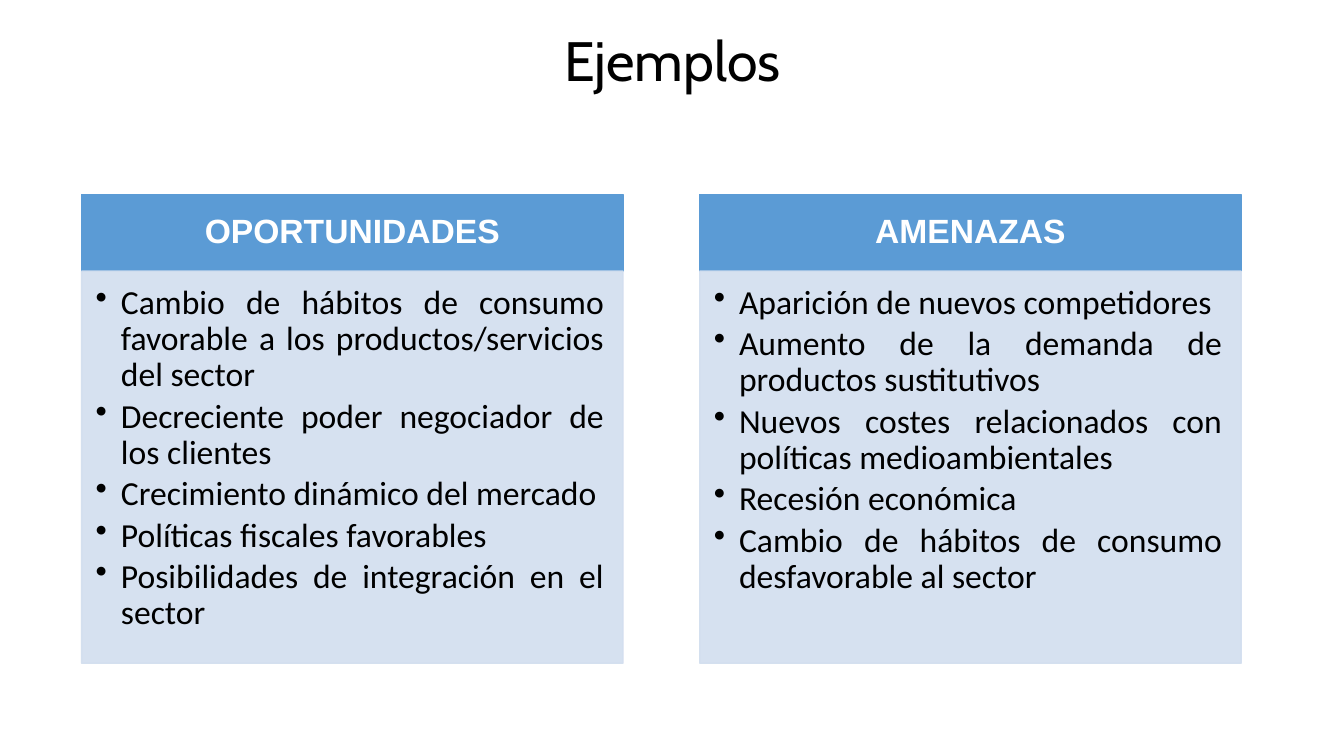
"""Build the slide of example opportunities and threats."""
from dataclasses import dataclass

from lxml.etree import SubElement
from pptx import Presentation
from pptx.dml.color import RGBColor
from pptx.enum.shapes import MSO_SHAPE as SHAPE
from pptx.enum.text import MSO_ANCHOR as ANCHOR, PP_ALIGN as ALIGN
from pptx.oxml.ns import qn
from pptx.util import Inches, Pt

BLACK = RGBColor(0x00, 0x00, 0x00)
WHITE = RGBColor(0xFF, 0xFF, 0xFF)
BLUE = RGBColor(0x5B, 0x9B, 0xD5)
PALE = RGBColor(0xD2, 0xDE, 0xEF)

LEFT, TOP, WIDTH, PITCH = 0.81, 1.93, 5.37, 6.13
HEAD_H, BODY_H = 0.76, 3.89


@dataclass
class Column:
    heading: str
    items: list[str]


COLUMNS = [
    Column("OPORTUNIDADES", [
        "Cambio de hábitos de consumo favorable a los productos/servicios del sector",
        "Decreciente poder negociador de los clientes",
        "Crecimiento dinámico del mercado",
        "Políticas fiscales favorables",
        "Posibilidades de integración en el sector",
    ]),
    Column("AMENAZAS", [
        "Aparición de nuevos competidores",
        "Aumento de la demanda de productos sustitutivos",
        "Nuevos costes relacionados con políticas medioambientales",
        "Recesión económica",
        "Cambio de hábitos de consumo desfavorable al sector",
    ]),
]


def set_text(p, text: str, font: str, size: float, color: RGBColor, align: ALIGN) -> None:
    p.text = text
    p.alignment = align
    p.line_spacing = 0.9
    p.font.name = font
    p.font.size = Pt(size)
    p.font.color.rgb = color


def set_frame(tf, anchor: ANCHOR, left: float, top: float, right: float, bottom: float) -> None:
    tf.word_wrap = True
    tf.vertical_anchor = anchor
    tf.margin_left, tf.margin_top = Inches(left), Inches(top)
    tf.margin_right, tf.margin_bottom = Inches(right), Inches(bottom)


def add_panel(s, left: float, top: float, height: float, color: RGBColor):
    sp = s.shapes.add_shape(SHAPE.RECTANGLE, Inches(left), Inches(top), Inches(WIDTH), Inches(height))
    sp.shadow.inherit = False
    sp.fill.solid()
    sp.fill.fore_color.rgb = color
    sp.line.color.rgb = color
    sp.line.width = Pt(1)
    return sp


def set_bullet(p) -> None:
    pPr = p._p.get_or_add_pPr()
    pPr.set("marL", str(Inches(0.25)))
    pPr.set("indent", str(Inches(-0.25)))
    bullet = pPr.makeelement(qn("a:buChar"), {"char": "•"})
    pPr.insert_element_before(bullet, "a:tabLst", "a:defRPr", "a:extLst")


def add_column(s, column: Column, left: float) -> None:
    head = add_panel(s, left, TOP, HEAD_H, BLUE)
    set_frame(head.text_frame, ANCHOR.MIDDLE, 0.19, 0.11, 0.19, 0.11)
    p = head.text_frame.paragraphs[0]
    set_text(p, column.heading, "Arial", 24, WHITE, ALIGN.CENTER)
    p.font.bold = True

    body = add_panel(s, left, TOP + HEAD_H, BODY_H, PALE)
    for color in body._element.spPr.iter(qn("a:srgbClr")):
        SubElement(color, qn("a:alpha"), val="90000")
    tf = body.text_frame
    set_frame(tf, ANCHOR.TOP, 0.14, 0.14, 0.19, 0.21)
    for i, item in enumerate(column.items):
        p = tf.add_paragraph() if i else tf.paragraphs[0]
        set_text(p, item, "Calibri", 24, BLACK, ALIGN.JUSTIFY)
        p.space_after = Pt(3.6)
        set_bullet(p)


def main() -> None:
    prs = Presentation()
    prs.slide_width, prs.slide_height = Inches(13.33), Inches(7.5)
    s = prs.slides.add_slide(prs.slide_layouts[6])
    title = s.shapes.add_textbox(Inches(0.92), Inches(0.4), Inches(11.5), Inches(0.47))
    set_frame(title.text_frame, ANCHOR.MIDDLE, 0.1, 0.05, 0.1, 0.05)
    set_text(title.text_frame.paragraphs[0], "Ejemplos", "Cabin", 39.6, BLACK, ALIGN.CENTER)
    for i, column in enumerate(COLUMNS):
        add_column(s, column, LEFT + i * PITCH)
    prs.save("out.pptx")


if __name__ == "__main__":
    main()
